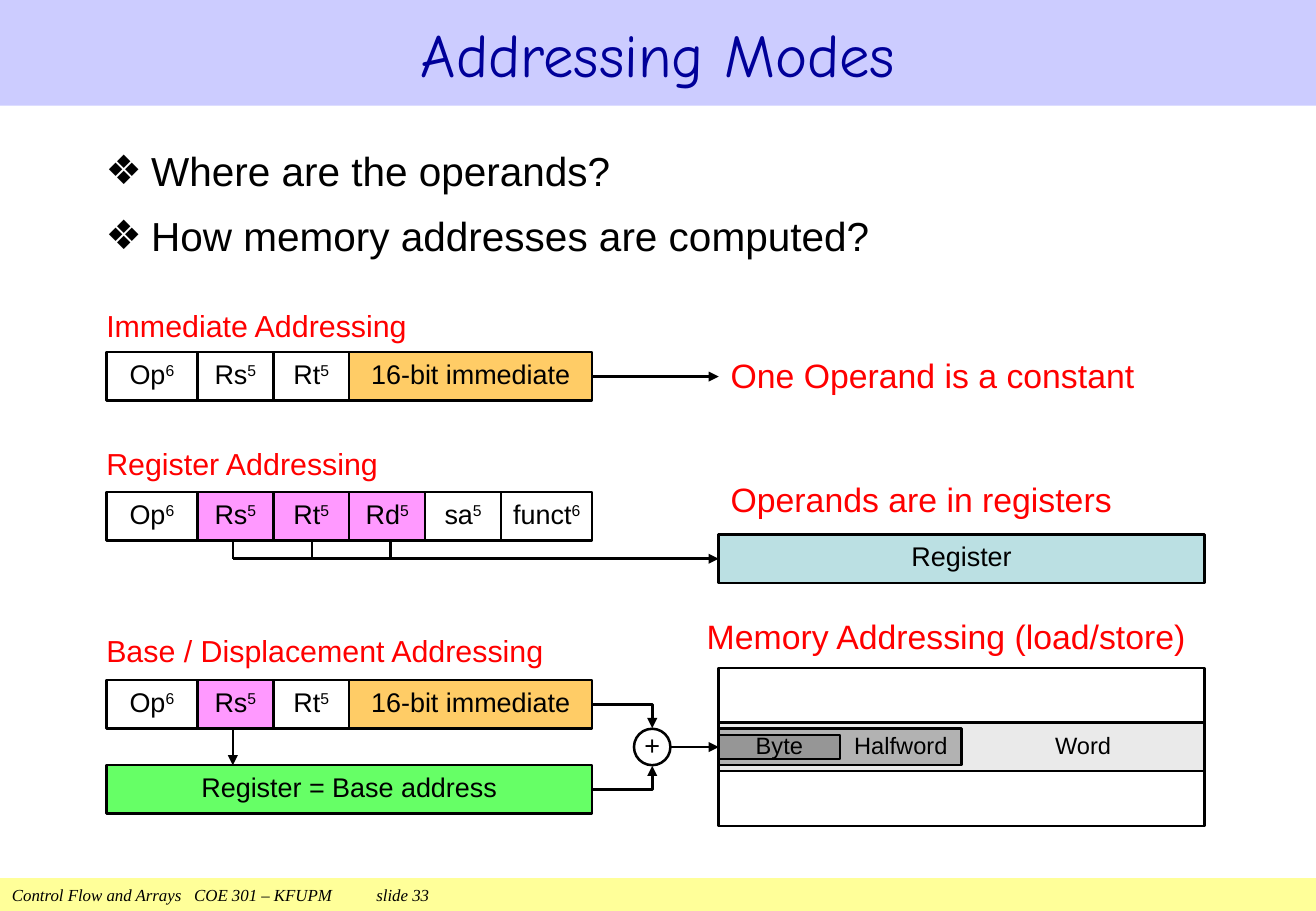
import dataclasses

import lxml.etree
import pptx
import pptx.dml.color
import pptx.enum.shapes
import pptx.enum.text
import pptx.oxml.ns
import pptx.util

Pt = pptx.util.Pt
Align = pptx.enum.text.PP_ALIGN
Anchor = pptx.enum.text.MSO_ANCHOR
Shape = pptx.enum.shapes.MSO_SHAPE
Connector = pptx.enum.shapes.MSO_CONNECTOR
qn = pptx.oxml.ns.qn


@dataclasses.dataclass(frozen=True)
class Theme:
    ink: str = "000000"
    plain: str = "FFFFFF"
    accent: str = "FF0000"
    title_ink: str = "000099"
    title_band: str = "CCCCFF"
    footer_band: str = "FFFF99"
    register_field: str = "FF99FF"
    immediate_field: str = "FFCC66"
    register: str = "BBE0E3"
    base_register: str = "66FF66"
    word: str = "EAEAEA"
    halfword: str = "B2B2B2"
    byte: str = "969696"
    font: str = "Arial"
    title_font: str = "Comic Neue"
    footer_font: str = "Times New Roman"
    title_size: float = 36
    body_size: float = 24
    note_size: float = 20
    mode_size: float = 18
    field_size: float = 16
    memory_size: float = 14
    footer_size: float = 10
    line_width: float = 1.5


class Diagram:
    def __init__(self, slide, theme):
        self.slide = slide
        self.theme = theme

    def color(self, value):
        return pptx.dml.color.RGBColor.from_string(value)

    def place(self, shape, left, top, width, height):
        shape.left, shape.top = Pt(left), Pt(top)
        shape.width, shape.height = Pt(width), Pt(height)

    def paint(self, shape, fill):
        if fill:
            shape.fill.solid()
            shape.fill.fore_color.rgb = self.color(fill)
        else:
            shape.fill.background()

    def frame(self, shape, insets, anchor=Anchor.MIDDLE):
        frame = shape.text_frame
        frame.word_wrap = True
        frame.auto_size = pptx.enum.text.MSO_AUTO_SIZE.NONE
        frame.vertical_anchor = anchor
        frame.margin_left, frame.margin_top, frame.margin_right, frame.margin_bottom = map(Pt, insets)
        return frame

    def style(self, paragraph, size, color=None, font=None, align=Align.LEFT):
        paragraph.alignment = align
        paragraph.font.size = Pt(size)
        paragraph.font.name = font or self.theme.font
        paragraph.font.color.rgb = self.color(color or self.theme.ink)

    def title(self, text, height):
        title = self.slide.shapes.title
        self.place(title, 0, 0, 780, height)
        self.paint(title, self.theme.title_band)
        frame = self.frame(title, (7.2, 3.6, 7.2, 3.6))
        frame.text = text
        self.style(frame.paragraphs[0], self.theme.title_size, self.theme.title_ink,
                   self.theme.title_font, Align.CENTER)

    def questions(self, texts, left, top, width, height):
        body = self.slide.placeholders[1]
        self.place(body, left, top, width, height)
        frame = self.frame(body, (7.2, 3.6, 7.2, 3.6), Anchor.TOP)
        frame.text = "\n".join(texts)
        for question in frame.paragraphs:
            self.style(question, self.theme.body_size)
            question.space_before = Pt(10)
            properties = question._p.get_or_add_pPr()
            properties.set("marL", str(Pt(27)))
            properties.set("indent", str(Pt(-27)))
            bullet = lxml.etree.Element(qn("a:buChar"), char="❖")
            properties.find(qn("a:defRPr")).addprevious(bullet)

    def footer(self, text, top, height):
        band = self.slide.shapes.add_shape(Shape.RECTANGLE, 0, Pt(top), Pt(780), Pt(height))
        band.shadow.inherit = False
        self.paint(band, self.theme.footer_band)
        band.line.fill.background()
        frame = self.frame(band, (7.2, 0, 7.2, 0))
        frame.text = text
        self.style(frame.paragraphs[0], self.theme.footer_size, font=self.theme.footer_font)
        frame.paragraphs[0].font.italic = True

    def box(self, text, left, top, width, height, fill=None, size=None, bits="",
            indent=0, outline=Shape.RECTANGLE):
        box = self.slide.shapes.add_shape(outline, Pt(left), Pt(top), Pt(width), Pt(height))
        box.shadow.inherit = False
        self.paint(box, fill)
        box.line.color.rgb = self.color(self.theme.ink)
        box.line.width = Pt(self.theme.line_width)
        if not text:
            return
        paragraph = self.frame(box, (indent, 0, 0, 0)).paragraphs[0]
        self.style(paragraph, size or self.theme.field_size, align=Align.CENTER)
        paragraph.line_spacing = 0.85
        paragraph.add_run().text = text
        if bits:
            exponent = paragraph.add_run()
            exponent.text = bits
            exponent._r.get_or_add_rPr().set("baseline", "30000")

    def instruction(self, fields, left, top, height):
        for name, bits, fill in fields:
            width = 9 * bits
            exponent = "" if name.startswith(str(bits)) else str(bits)
            self.box(name, left, top, width, height, fill, bits=exponent)
            left += width

    def label(self, text, left, top, width, height, size, inset=0, anchor=Anchor.MIDDLE):
        label = self.slide.shapes.add_textbox(Pt(left), Pt(top), Pt(width), Pt(height))
        frame = self.frame(label, (inset, 0, inset, 0), anchor)
        frame.text = text
        self.style(frame.paragraphs[0], size, self.theme.accent)

    def wire(self, start, end, arrow=True, bent=False):
        kind = Connector.ELBOW if bent else Connector.STRAIGHT
        wire = self.slide.shapes.add_connector(kind, *map(Pt, start + end))
        wire.line.color.rgb = self.color(self.theme.ink)
        wire.line.width = Pt(self.theme.line_width)
        properties = wire._element.spPr
        if bent:
            properties.find(qn("a:prstGeom")).set("prst", "bentConnector2")
        if arrow:
            lxml.etree.SubElement(properties.find(qn("a:ln")), qn("a:tailEnd"), type="triangle")
        lxml.etree.SubElement(properties, qn("a:effectLst"))


def main():
    deck = pptx.Presentation()
    deck.slide_width, deck.slide_height = Pt(780), Pt(540)
    theme = Theme()
    diagram = Diagram(deck.slides.add_slide(deck.slide_layouts[1]), theme)

    diagram.footer("Control Flow and Arrays\tCOE 301 – KFUPM\tslide 33", 520.6, 19.4)
    diagram.title("Addressing Modes", 62.6)
    diagram.questions(["Where are the operands?", "How memory addresses are computed?"],
                      55.4, 82.8, 654, 82.8)

    left, right, width, height = 63, 426, 288, 28.8
    plain, used = theme.plain, theme.register_field
    op, rt = ("Op", 6, plain), ("Rt", 5, plain)
    immediate = ("16-bit immediate", 16, theme.immediate_field)
    modes = [
        ("Immediate Addressing", 179.3, 27.4, 208.8, [op, ("Rs", 5, plain), rt, immediate]),
        ("Register Addressing", 260.6, 28, 291.6,
         [op, ("Rs", 5, used), ("Rt", 5, used), ("Rd", 5, used), ("sa", 5, plain), ("funct", 6, plain)]),
        ("Base / Displacement Addressing", 370, 31, 403.2, [op, ("Rs", 5, used), rt, immediate]),
    ]
    for mode, label_top, label_height, top, fields in modes:
        diagram.label(mode, left, label_top, width, label_height, theme.mode_size)
        diagram.instruction(fields, left, top, height)

    notes = [
        ("One Operand is a constant", right, 211, 23, Anchor.MIDDLE),
        ("Operands are in registers", right, 283.7, 27.4, Anchor.TOP),
        ("Memory Addressing (load/store)", 411.8, 365, 28.8, Anchor.TOP),
    ]
    for note, note_left, top, note_height, anchor in notes:
        diagram.label(note, note_left, top, 328, note_height, theme.note_size, 7.2, anchor)

    diagram.wire((left + width, 223.2), (right, 223.2))

    diagram.box("Register", right, 316.8, width, height, theme.register)
    diagram.wire((138, 331.2), (right, 331.2))
    for operand in range(3):
        x = 138 + 46.8 * operand
        diagram.wire((x, 320.4), (x, 331.2), arrow=False)

    diagram.box("Register = Base address", left, 453.6, width, height, theme.base_register)
    diagram.wire((138, 432), (138, 453.6))
    diagram.box("+", 375.8, 432, 21.6, 21.6, plain, outline=Shape.OVAL)
    for source, adder_edge in ((417.6, 431.6), (468, 454)):
        diagram.wire((left + width, source), (386.6, adder_edge), bent=True)

    diagram.box("Word", right, 428.4, width, height, theme.word, theme.memory_size, indent=144)
    diagram.box("", right, 396, width, 93.6)
    diagram.box("Halfword", right, 432, 144, 21.6, theme.halfword, theme.memory_size, indent=72)
    diagram.box("Byte", right, 435.6, 72, 14.4, theme.byte, theme.memory_size)
    diagram.wire((397.4, 442.8), (right, 442.8))

    deck.save("out.pptx")


if __name__ == "__main__":
    main()
